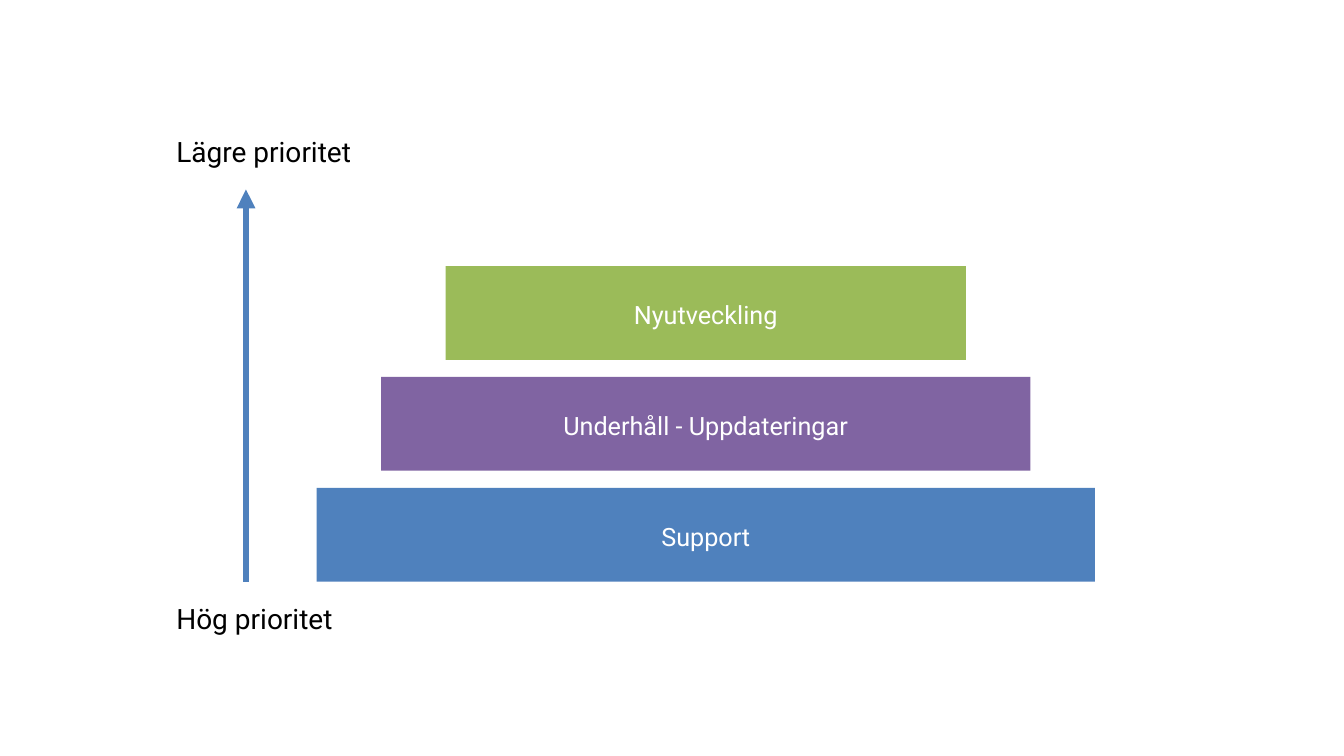
from lxml.etree import SubElement
from pptx import Presentation
from pptx.dml.color import RGBColor
from pptx.enum.shapes import MSO_CONNECTOR, MSO_SHAPE
from pptx.enum.text import MSO_ANCHOR, PP_ALIGN
from pptx.oxml.ns import qn
from pptx.util import Inches, Pt

BLACK = RGBColor(0x00, 0x00, 0x00)
WHITE = RGBColor(0xFF, 0xFF, 0xFF)
BLUE = RGBColor(0x4F, 0x81, 0xBD)
PURPLE = RGBColor(0x80, 0x64, 0xA2)
GREEN = RGBColor(0x9B, 0xBB, 0x59)

# Pyramid levels from the base upwards
LEVELS = [
    ("Support", BLUE),
    ("Underhåll - Uppdateringar", PURPLE),
    ("Nyutveckling", GREEN),
]
BASE_LEFT, BASE_TOP, BASE_WIDTH = 3.14, 4.84, 7.72
LEVEL_HEIGHT, LEVEL_PITCH, LEVEL_INSET = 0.93, 1.1, 0.64
AXIS_X, AXIS_TOP = 2.44, 1.88
LABEL_LEFT = 1.65


class PrioritySlide:
    font_name = "Roboto"

    def __init__(self, presentation):
        self.slide = presentation.slides.add_slide(presentation.slide_layouts[6])

    def set_text(self, shape, text, size, color):
        shape.text_frame.word_wrap = True
        paragraph = shape.text_frame.paragraphs[0]
        paragraph.text = text
        paragraph.font.name = self.font_name
        paragraph.font.size = Pt(size)
        paragraph.font.color.rgb = color
        return paragraph

    def block(self, text, left, top, width, height, color):
        shape = self.slide.shapes.add_shape(
            MSO_SHAPE.RECTANGLE, Inches(left), Inches(top), Inches(width), Inches(height)
        )
        shape.shadow.inherit = False
        shape.fill.solid()
        shape.fill.fore_color.rgb = color
        shape.line.fill.background()
        shape.text_frame.vertical_anchor = MSO_ANCHOR.MIDDLE
        paragraph = self.set_text(shape, text, 18, WHITE)
        paragraph.alignment = PP_ALIGN.CENTER
        paragraph.line_spacing = 1.1

    def label(self, text, left, top):
        box = self.slide.shapes.add_textbox(
            Inches(left), Inches(top), Inches(1.99), Inches(0.44)
        )
        self.set_text(box, text, 20, BLACK)

    def up_arrow(self, x, bottom, top):
        arrow = self.slide.shapes.add_connector(
            MSO_CONNECTOR.STRAIGHT, Inches(x), Inches(bottom), Inches(x), Inches(top)
        )
        arrow.line.color.rgb = BLUE
        arrow.line.width = Pt(4.5)
        properties = arrow._element.spPr
        SubElement(properties.find(qn("a:ln")), qn("a:tailEnd"), type="triangle")
        SubElement(properties, qn("a:effectLst"))


def main():
    presentation = Presentation()
    presentation.slide_width = Inches(13.33)
    presentation.slide_height = Inches(7.5)
    priorities = PrioritySlide(presentation)

    for level, (text, color) in enumerate(LEVELS):
        inset = level * LEVEL_INSET
        priorities.block(
            text,
            BASE_LEFT + inset,
            BASE_TOP - level * LEVEL_PITCH,
            BASE_WIDTH - 2 * inset,
            LEVEL_HEIGHT,
            color,
        )

    priorities.up_arrow(AXIS_X, BASE_TOP + LEVEL_HEIGHT, AXIS_TOP)
    priorities.label("Lägre prioritet", LABEL_LEFT, 1.29)
    priorities.label("Hög prioritet", LABEL_LEFT, 5.92)
    presentation.save("out.pptx")


if __name__ == "__main__":
    main()
